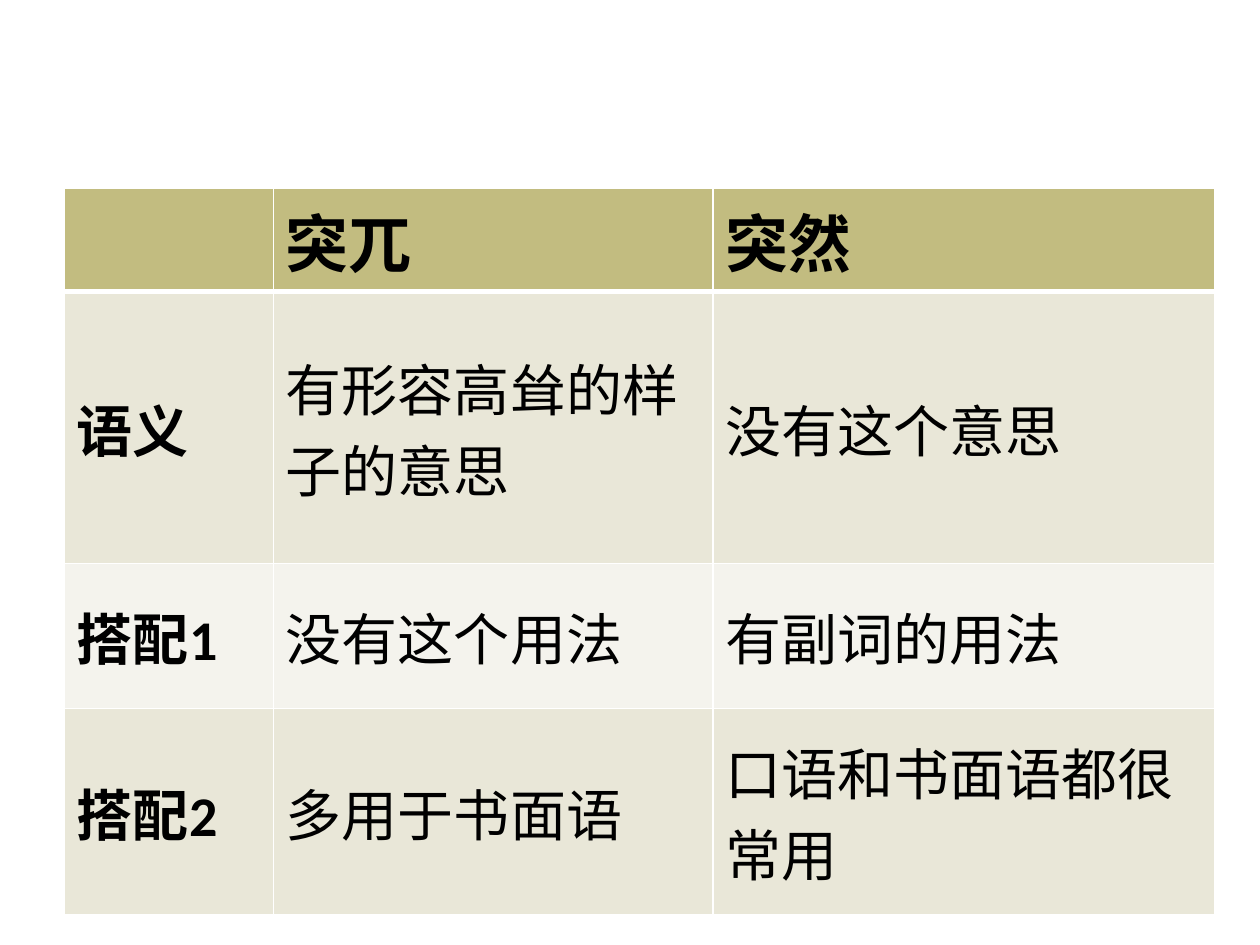
from lxml import etree
from pptx import Presentation
from pptx.dml.color import RGBColor
from pptx.enum.text import MSO_ANCHOR, PP_ALIGN
from pptx.oxml.ns import qn
from pptx.util import Inches, Pt

MIDDLE = MSO_ANCHOR.MIDDLE
JUSTIFY = PP_ALIGN.JUSTIFY

COL_WIDTHS = [1.66, 3.49, 3.98]
ROW_HEIGHTS = [0.61, 2.16, 1.15, 1.64]
ROW_FILLS = ["C2BC80", "E9E7D8", "F4F3ED", "E9E7D8"]
ROWS = [
    ["", "突兀", "突然"],
    ["语义", "有形容高耸的样子的意思", "没有这个意思"],
    ["搭配1", "没有这个用法", "有副词的用法"],
    ["搭配2", "多用于书面语", "口语和书面语都很常用"],
]


def color(value):
    return RGBColor.from_string(value)


def add_borders(cell, bottom):
    """Draw white 1 pt cell borders, with the bottom one in the given points."""
    tc_pr = cell._tc.get_or_add_tcPr()
    widths = {"a:lnL": 1, "a:lnR": 1, "a:lnT": 1, "a:lnB": bottom}
    # Borders must come before the fill in the cell properties
    for i, (tag, width) in enumerate(widths.items()):
        ln = etree.Element(qn(tag), w=str(Pt(width)))
        fill = etree.SubElement(ln, qn("a:solidFill"))
        etree.SubElement(fill, qn("a:srgbClr"), val="FFFFFF")
        tc_pr.insert(i, ln)


prs = Presentation()
prs.slide_width, prs.slide_height = Inches(10), Inches(7.5)
s = prs.slides.add_slide(prs.slide_layouts[6])

table = s.shapes.add_table(
    len(ROWS), len(COL_WIDTHS), Inches(0.51), Inches(1.49),
    Inches(sum(COL_WIDTHS)), Inches(sum(ROW_HEIGHTS))).table
for col, width in zip(table.columns, COL_WIDTHS):
    col.width = Inches(width)
for row, height in zip(table.rows, ROW_HEIGHTS):
    row.height = Inches(height)

for i, texts in enumerate(ROWS):
    header = i == 0
    for j, text in enumerate(texts):
        cell = table.cell(i, j)
        cell.vertical_anchor = MIDDLE
        cell.fill.solid()
        cell.fill.fore_color.rgb = color(ROW_FILLS[i])
        add_borders(cell, bottom=3 if header else 1)
        if not text:
            continue
        p = cell.text_frame.paragraphs[0]
        if header:
            p.alignment = JUSTIFY
        r = p.add_run()
        r.text = text
        font_format = {"name": "Calibri", "size": Pt(36 if header else 32),
                       "bold": header or j == 0}
        for name, value in font_format.items():
            setattr(r.font, name, value)
        r.font.color.rgb = color("000000")

prs.save("out.pptx")
